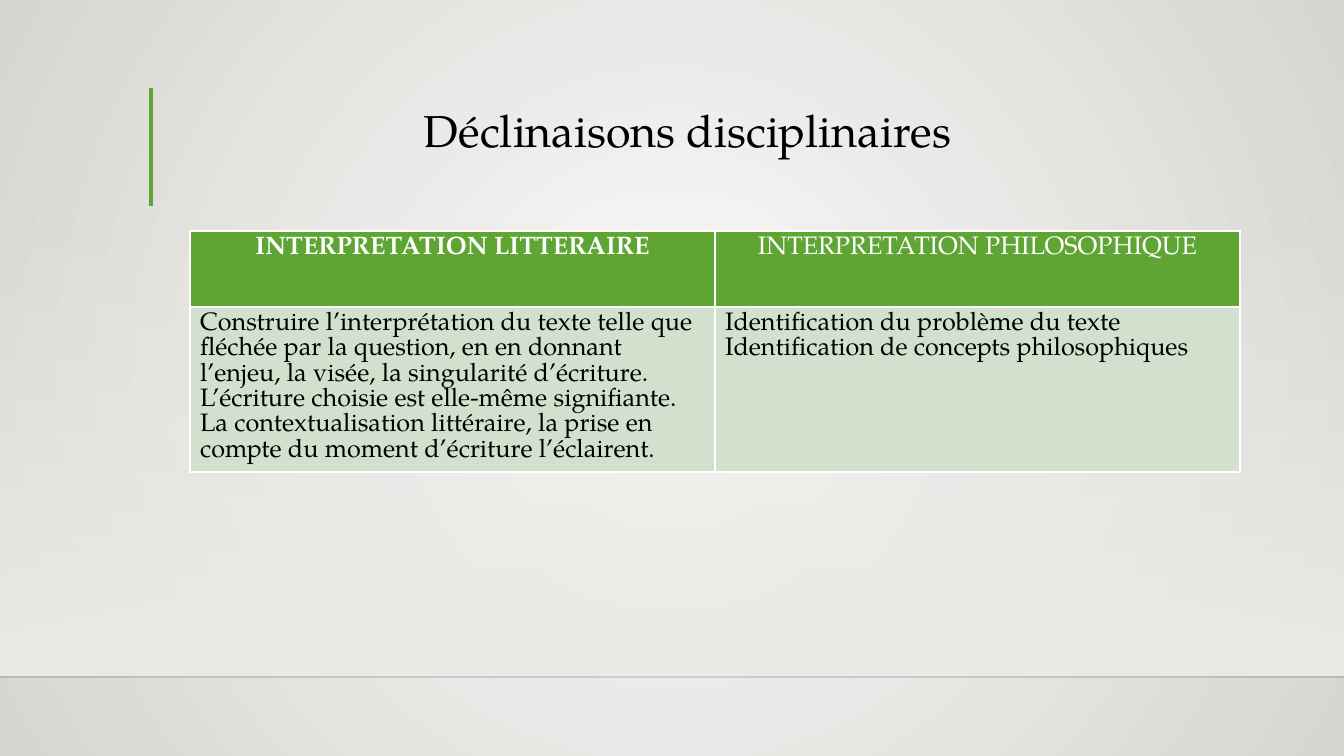
from typing import NamedTuple

from lxml.etree import SubElement
from pptx import Presentation
from pptx.dml.color import RGBColor
from pptx.dml.fill import FillFormat
from pptx.enum.shapes import MSO_CONNECTOR as Connector, MSO_SHAPE as Shape
from pptx.enum.text import MSO_ANCHOR as Anchor, MSO_AUTO_SIZE as AutoSize, PP_ALIGN as Align
from pptx.oxml import parse_xml
from pptx.oxml.ns import nsdecls, qn
from pptx.slide import Slide
from pptx.table import _Cell as Cell
from pptx.text.text import _Paragraph as Paragraph
from pptx.util import Emu, Pt

FONT = "TeX Gyre Pagella"
GREEN, PALE_GREEN, WHITE, BLACK = "5FA534", "D2E1CE", "FFFFFF", "000000"
SLIDE_WIDTH, SLIDE_HEIGHT = 1344, 756
TABLE_LEFT, TABLE_TOP, COLUMN_WIDTH = 190, 231, 525


class Rule(NamedTuple):
    start: tuple[int, int]
    end: tuple[int, int]
    color: str
    width: int
    opacity: int = 100


class Style(NamedTuple):
    size: int
    color: str
    align: Align
    bold: bool = False


class Row(NamedTuple):
    height: int
    fill: str
    cells: list[tuple[list[str], Style]]


HEADER = Style(18, WHITE, Align.CENTER)
BODY = Style(18, BLACK, Align.LEFT)

RULES = [
    Rule((0, 677), (SLIDE_WIDTH, 677), "000001", 1, 20),
    Rule((151, 88), (151, 206), GREEN, 3),
]

ROWS = [
    Row(76, GREEN, [
        (["INTERPRETATION LITTERAIRE"], HEADER._replace(bold=True)),
        (["INTERPRETATION PHILOSOPHIQUE"], HEADER),
    ]),
    Row(165, PALE_GREEN, [
        ([
            "Construire l’interprétation du texte telle que fléchée par la question, "
            "en en donnant l’enjeu, la visée, la singularité d’écriture.",
            "L’écriture choisie est elle-même signifiante. La contextualisation littéraire, "
            "la prise en compte du moment d’écriture l’éclairent.",
        ], BODY),
        ([
            "Identification du problème du texte",
            "Identification de concepts philosophiques",
        ], BODY),
    ]),
]


def px(length: int) -> Emu:
    return Emu(round(length * 914400 / 100.8))


def rgb(color: str) -> RGBColor:
    return RGBColor.from_string(color)


def set_opacity(color_element, percent: int) -> None:
    SubElement(color_element, qn("a:alpha")).set("val", str(percent * 1000))


def set_gradient(fill: FillFormat, start: str, end: str) -> None:
    fill.gradient()
    for stop, color in zip(fill.gradient_stops, (start, end)):
        stop.color.rgb = rgb(color)


def write(paragraph: Paragraph, text: str, style: Style) -> None:
    paragraph.alignment = style.align
    run = paragraph.add_run()
    run.text = text
    run.font.name = FONT
    run.font.size = Pt(style.size)
    run.font.bold = style.bold
    run.font.color.rgb = rgb(style.color)


def add_background(slide: Slide) -> None:
    set_gradient(slide.background.fill, "FAFAF9", "D7D5D2")
    gradient = slide.element.find(".//" + qn("a:gradFill"))
    gradient.replace(gradient.find(qn("a:lin")), parse_xml(
        f'<a:path {nsdecls("a")} path="circle">'
        '<a:fillToRect l="50000" t="50000" r="50000" b="50000"/></a:path>'))


def add_floor(slide: Slide) -> None:
    floor = slide.shapes.add_shape(Shape.RECTANGLE, 0, px(222), px(SLIDE_WIDTH), px(454))
    floor.shadow.inherit = False
    floor.line.fill.background()
    set_gradient(floor.fill, "EDEBE7", "EDEBE7")
    floor.fill.gradient_angle = 270
    set_opacity(floor.element.find(".//" + qn("a:srgbClr")), 0)


def add_rule(slide: Slide, rule: Rule) -> None:
    connector = slide.shapes.add_connector(
        Connector.STRAIGHT, *map(px, rule.start), *map(px, rule.end))
    connector.line.color.rgb = rgb(rule.color)
    connector.line.width = Pt(rule.width)
    if rule.opacity < 100:
        set_opacity(connector.element.find(".//" + qn("a:srgbClr")), rule.opacity)
    SubElement(connector.element.spPr, qn("a:effectLst"))


def add_title(slide: Slide, text: str) -> None:
    title = slide.shapes.title
    title.left, title.top, title.width, title.height = map(px, (169, 89, 1049, 73))
    frame = title.text_frame
    frame.vertical_anchor = Anchor.BOTTOM
    frame.auto_size = AutoSize.NONE
    frame.word_wrap = True
    paragraph = frame.paragraphs[0]
    paragraph.line_spacing = 0.9
    write(paragraph, text, Style(32, BLACK, Align.CENTER))


def add_borders(cell: Cell, color: str, width: int) -> None:
    properties = cell._tc.get_or_add_tcPr()
    for index, side in enumerate("LRTB"):
        properties.insert(index, parse_xml(
            f'<a:ln{side} {nsdecls("a")} w="{Pt(width)}"><a:solidFill>'
            f'<a:srgbClr val="{color}"/></a:solidFill></a:ln{side}>'))


def add_comparison(slide: Slide, rows: list[Row]) -> None:
    columns = len(rows[0].cells)
    table = slide.shapes.add_table(
        len(rows), columns, px(TABLE_LEFT), px(TABLE_TOP),
        px(COLUMN_WIDTH * columns), px(sum(row.height for row in rows))).table
    for column in table.columns:
        column.width = px(COLUMN_WIDTH)
    for row_index, row in enumerate(rows):
        table.rows[row_index].height = px(row.height)
        for column_index, (texts, style) in enumerate(row.cells):
            cell = table.cell(row_index, column_index)
            cell.fill.solid()
            cell.fill.fore_color.rgb = rgb(row.fill)
            add_borders(cell, WHITE, 1)
            frame = cell.text_frame
            for index, text in enumerate(texts):
                paragraph = frame.add_paragraph() if index else frame.paragraphs[0]
                write(paragraph, text, style)


def main() -> None:
    presentation = Presentation()
    presentation.slide_width = px(SLIDE_WIDTH)
    presentation.slide_height = px(SLIDE_HEIGHT)
    slide = presentation.slides.add_slide(presentation.slide_layouts.get_by_name("Title Only"))
    add_background(slide)
    add_floor(slide)
    for rule in RULES:
        add_rule(slide, rule)
    add_title(slide, "Déclinaisons disciplinaires ")
    add_comparison(slide, ROWS)
    presentation.save("out.pptx")


if __name__ == "__main__":
    main()
